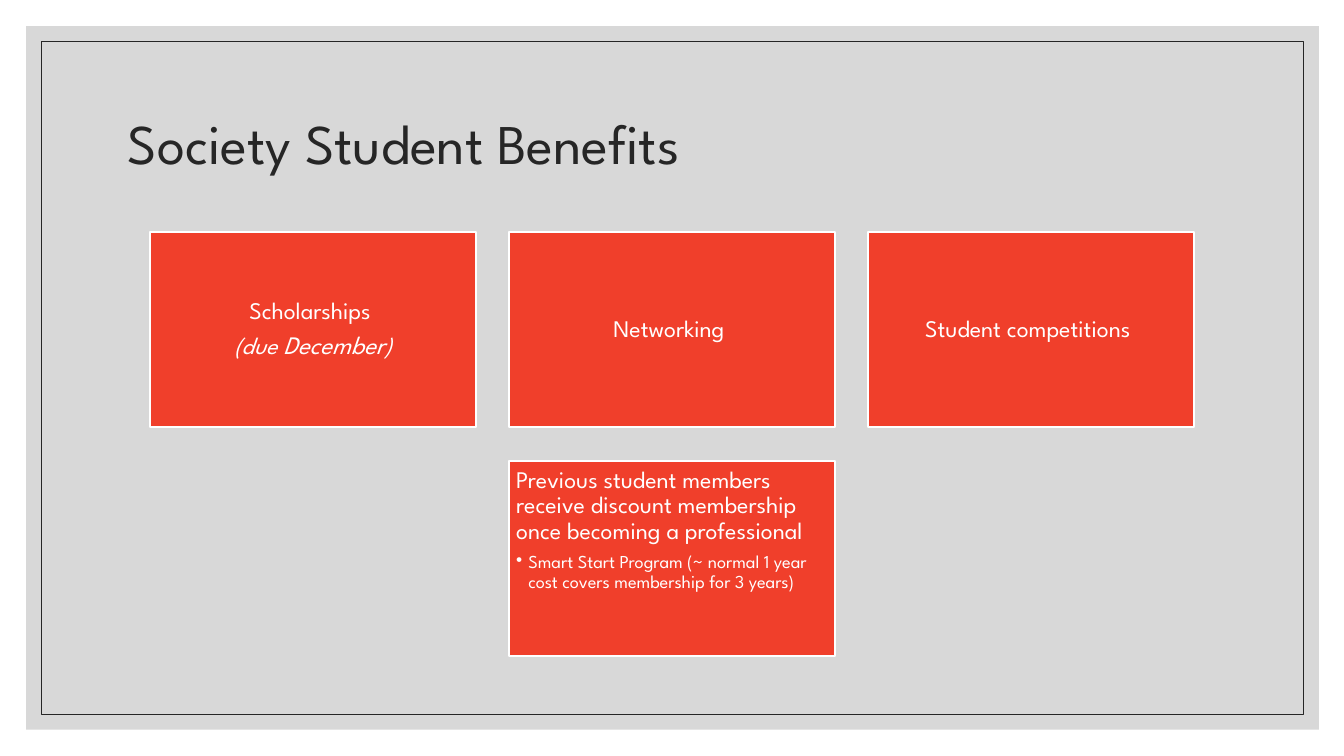
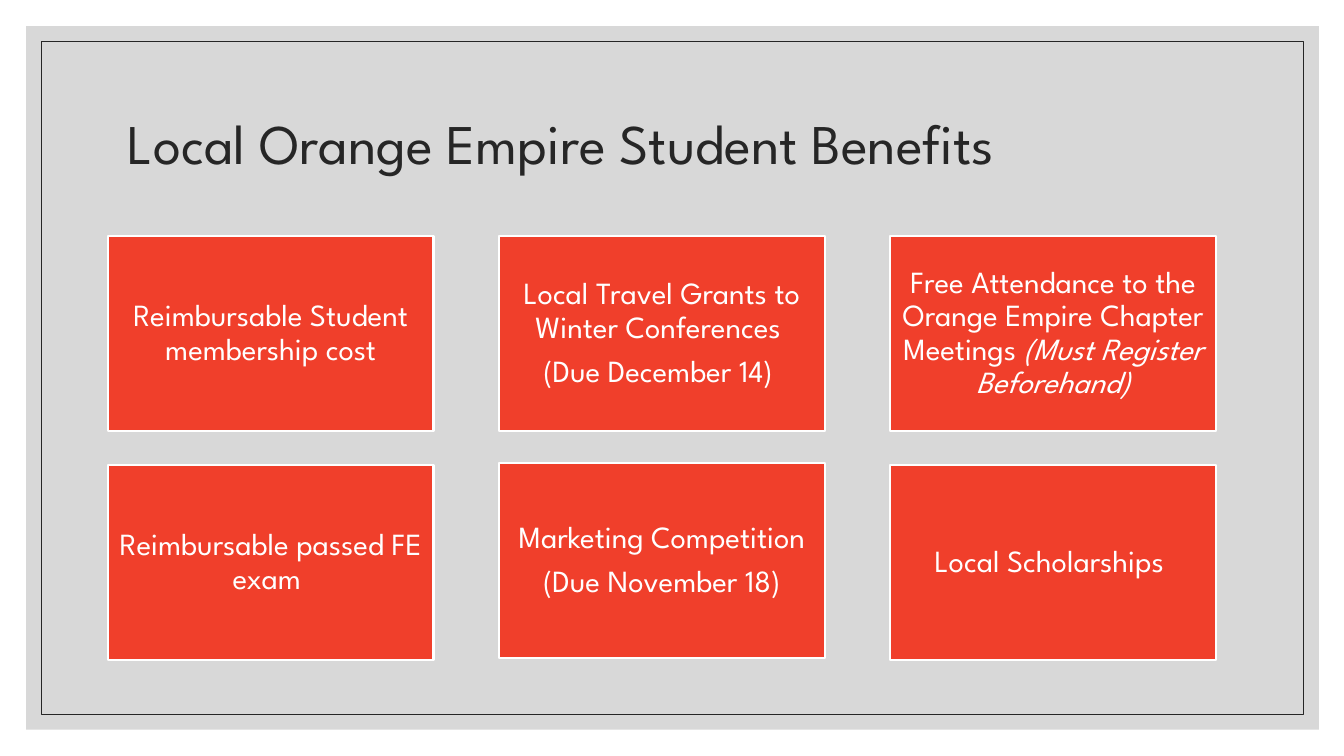
import pptx
import pptx.dml.color
import pptx.enum.shapes
import pptx.enum.text
import pptx.oxml
import pptx.oxml.ns
import pptx.util
from lxml import etree

Inches = pptx.util.Inches
Pt = pptx.util.Pt
RGBColor = pptx.dml.color.RGBColor
Align = pptx.enum.text.PP_ALIGN
Anchor = pptx.enum.text.MSO_ANCHOR
RECTANGLE = pptx.enum.shapes.MSO_SHAPE.RECTANGLE

# Colours and font
PANEL_GREY = RGBColor(0xBF, 0xBF, 0xBF)
INK = RGBColor(0x26, 0x26, 0x26)
CARD_RED = RGBColor(0xF0, 0x3F, 0x2B)
WHITE = RGBColor(0xFF, 0xFF, 0xFF)
FONT = "League Spartan"

# Card size and row step, in inches
CARD_WIDTH, CARD_HEIGHT, ROW_STEP = 3.23, 1.94, 2.27


def set_values(target, values):
    for name, value in values.items():
        setattr(target, name, value)


class Deck:
    """Holds the style, the presentation and the current slide."""

    def __init__(self):
        self.presentation = pptx.Presentation()
        set_values(self.presentation, {"slide_width": Inches(13.33), "slide_height": Inches(7.5)})
        self.slide = None

    def add_slide(self, title):
        self.slide = self.presentation.slides.add_slide(self.presentation.slide_layouts[6])
        # Grey panel and thin frame
        self.rectangle(0.26, 0.26, 12.82, 6.98, fill=PANEL_GREY, opacity=60)
        self.rectangle(0.41, 0.41, 12.52, 6.68, line=INK, line_width=0.5)
        # Title
        box = self.slide.shapes.add_textbox(Inches(1.17), Inches(0.7), Inches(11), Inches(1.5))
        set_values(box.text_frame, {"word_wrap": True, "vertical_anchor": Anchor.MIDDLE})
        self.paragraph(box.text_frame.paragraphs[0], [(title, {})], 40, INK)

    def rectangle(self, left, top, width, height, fill=None, opacity=100, line=None, line_width=1):
        shape = self.slide.shapes.add_shape(
            RECTANGLE, Inches(left), Inches(top), Inches(width), Inches(height))
        shape.shadow.inherit = False
        if fill is None:
            shape.fill.background()
        else:
            shape.fill.solid()
            shape.fill.fore_color.rgb = fill
            if opacity < 100:
                colour = shape.fill._xPr.find(".//" + pptx.oxml.ns.qn("a:srgbClr"))
                alpha = etree.SubElement(colour, pptx.oxml.ns.qn("a:alpha"))
                alpha.set("val", str(opacity * 1000))
        if line is None:
            shape.line.fill.background()
        else:
            shape.line.color.rgb = line
            shape.line.width = Pt(line_width)
        return shape

    def paragraph(self, paragraph, runs, size, color, align=Align.LEFT, space=0):
        set_values(paragraph, {"alignment": align, "line_spacing": 0.9,
                               "space_before": Pt(0), "space_after": Pt(round(space * size, 1))})
        for text, changes in runs:
            run = paragraph.add_run()
            run.text = text
            set_values(run.font, {"name": FONT, "size": Pt(size), **changes})
            run.font.color.rgb = color

    def bullet(self, paragraph, indent):
        properties = paragraph._p.get_or_add_pPr()
        properties.set("marL", str(Inches(indent)))
        properties.set("indent", str(-Inches(indent)))
        mark = etree.SubElement(properties, pptx.oxml.ns.qn("a:buChar"))
        mark.set("char", "•")

    def card(self, left, top, paragraphs, size, inset, align=Align.CENTER, anchor=Anchor.MIDDLE):
        shape = self.rectangle(left, top, CARD_WIDTH, CARD_HEIGHT,
                               fill=CARD_RED, line=WHITE, line_width=1.5)
        frame = shape.text_frame
        margins = {f"margin_{side}": Inches(inset) for side in ("left", "top", "right", "bottom")}
        set_values(frame, {"word_wrap": True, "vertical_anchor": anchor, **margins})
        for number, runs in enumerate(paragraphs):
            paragraph = frame.add_paragraph() if number else frame.paragraphs[0]
            self.paragraph(paragraph, runs, size, WHITE, align, 0.35)
        return frame


def society_benefits(deck):
    deck.add_slide("Society Student Benefits")
    left, top, step = 1.49, 2.3, 3.56
    size, inset = 17, 0.07
    italic = {"italic": True}

    # Top row
    benefits = [
        [[("Scholarships ", {})],
         [("(due ", italic), ("December", {"italic": True, "size": Pt(18)}), (")", italic)]],
        [[("Networking ", {})]],
        [[("Student competitions ", {})]],
    ]
    for column, paragraphs in enumerate(benefits):
        deck.card(left + column * step, top, paragraphs, size, inset)

    # Membership card with a bullet
    membership = [[("Previous student members receive discount membership "
                    "once becoming a professional", {})]]
    frame = deck.card(left + step, top + ROW_STEP, membership, size, inset, Align.LEFT, Anchor.TOP)
    program = frame.add_paragraph()
    deck.paragraph(program, [("Smart Start Program (~ normal 1 year cost covers "
                              "membership for 3 years)", {})], 13, WHITE, space=0.15)
    deck.bullet(program, 0.12)


def local_benefits(deck):
    deck.add_slide("Local Orange Empire Student Benefits")
    left, top, step = 1.07, 2.34, 3.88

    # Two rows of three; the middle card of the lower row sits slightly higher
    benefits = [
        [[("Reimbursable Student membership cost", {})]],
        [[("Local Travel Grants to Winter Conferences ", {})], [("(Due December 14) ", {})]],
        [[("Free Attendance to the Orange Empire Chapter Meetings ", {}),
          ("(Must Register Beforehand)", {"italic": True})]],
        [[("Reimbursable passed FE exam ", {})]],
        [[("Marketing Competition", {})], [("(Due November 18)", {})]],
        [[("Local Scholarships ", {})]],
    ]
    for number, paragraphs in enumerate(benefits):
        row, column = divmod(number, 3)
        lift = 0.02 if (row, column) == (1, 1) else 0
        deck.card(left + column * step, top + row * ROW_STEP - lift, paragraphs, 22, 0.09)


def main():
    deck = Deck()
    society_benefits(deck)
    local_benefits(deck)
    deck.presentation.save("out.pptx")


if __name__ == "__main__":
    main()
